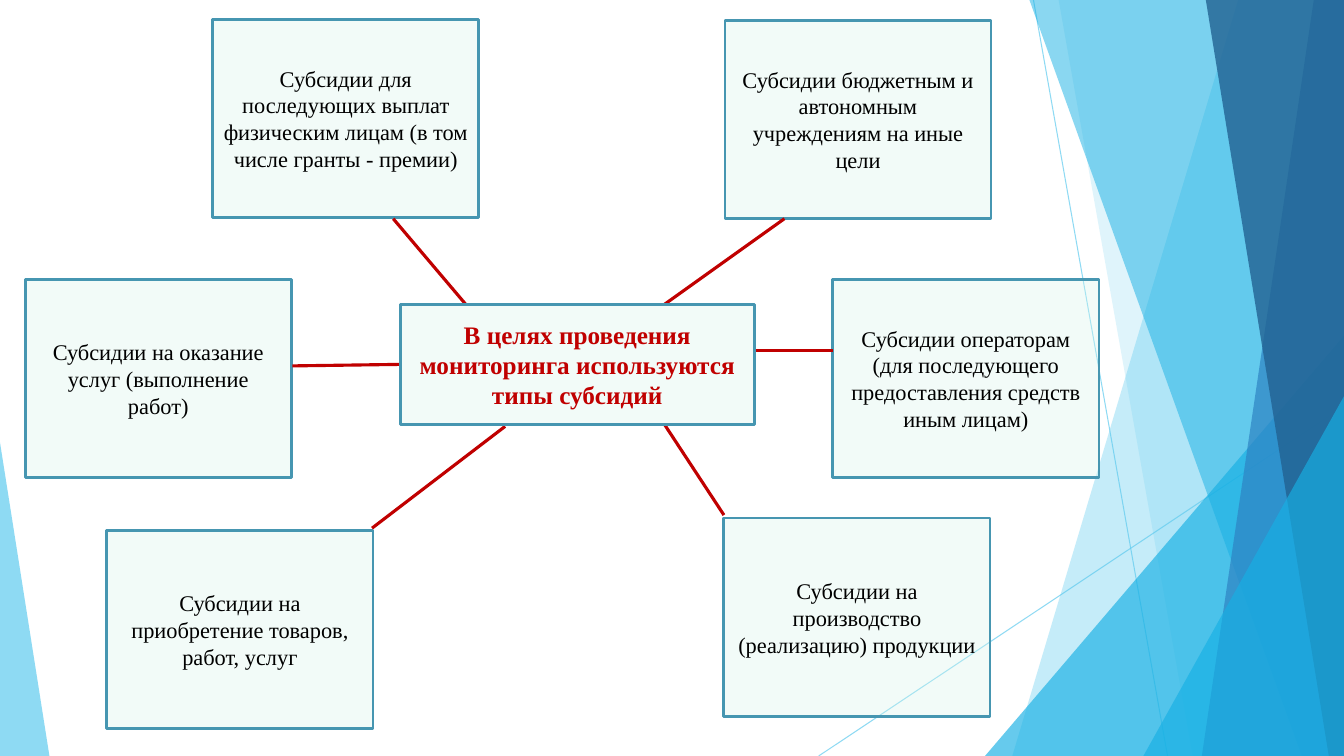
from lxml import etree
from pptx import Presentation
from pptx.dml.color import RGBColor
from pptx.enum.shapes import MSO_CONNECTOR, MSO_SHAPE
from pptx.enum.text import MSO_ANCHOR, PP_ALIGN
from pptx.oxml.ns import qn
from pptx.util import Pt

PX = 9144  # 100 px to the inch
SLIDE_W, SLIDE_H = 1333, 750
FONT = "Times New Roman"

STRAIGHT = MSO_CONNECTOR.STRAIGHT
RECTANGLE, TRIANGLE = MSO_SHAPE.RECTANGLE, MSO_SHAPE.ISOSCELES_TRIANGLE
MIDDLE, CENTER = MSO_ANCHOR.MIDDLE, PP_ALIGN.CENTER
LEFT_SIDE = 1

SKY = RGBColor(0x5F, 0xCB, 0xEF)
CYAN = RGBColor(0x17, 0xB0, 0xE4)
BLUE = RGBColor(0x2E, 0x83, 0xC3)
NAVY = RGBColor(0x22, 0x62, 0x92)
MINT = RGBColor(0xD9, 0xF6, 0xEC)
TEAL = RGBColor(0x46, 0x96, 0xB1)
RED = RGBColor(0xC0, 0x00, 0x00)
BLACK = RGBColor(0x00, 0x00, 0x00)

CARD_W, CARD_H = 264, 197
CARDS = [  # left, top, text
    (211, 19, "Субсидии для последующих выплат физическим лицам (в том числе гранты - премии)"),
    (106, 526, "Субсидии на приобретение товаров, работ, услуг"),
    (25, 277, "Субсидии на оказание услуг (выполнение работ)"),
    (718, 514, "Субсидии на производство (реализацию) продукции"),
    (719, 20, "Субсидии бюджетным и автономным учреждениям на иные цели"),
    (826, 277, "Субсидии операторам (для последующего предоставления средств иным лицам)"),
]
HUB = (397, 302, 351, 119)
HUB_TEXT = "В целях проведения мониторинга используются типы субсидий"
SPOKES = [  # start and end
    (462, 302, 390, 217),
    (659, 302, 778, 217),
    (748, 348, 826, 348),
    (718, 511, 659, 421),
    (369, 524, 501, 423),
]
LEFT_SPOKE = (290, 363, 397, 362)


def set_alpha(fill_format, percent):
    """Make a solid fill translucent."""
    color = fill_format._xPr.find(".//" + qn("a:srgbClr"))
    etree.SubElement(color, qn("a:alpha")).set("val", str(percent * 1000))


def paint(shape, color, alpha):
    shape.shadow.inherit = False
    shape.fill.solid()
    shape.fill.fore_color.rgb = color
    set_alpha(shape.fill, alpha)
    shape.line.fill.background()


def add_line(page, ends, color, width):
    line = page.shapes.add_connector(STRAIGHT, *(value * PX for value in ends))
    line.line.color.rgb = color
    line.line.width = Pt(width)
    etree.SubElement(line.element.spPr, qn("a:effectLst"))
    return line


def add_triangle(page, box, apex, color, alpha):
    triangle = page.shapes.add_shape(TRIANGLE, *(value * PX for value in box))
    triangle.adjustments[0] = apex
    paint(triangle, color, alpha)


def add_band(page, box, top_left, bottom_left, color, alpha):
    """Slanted band that reaches the right edge of the box."""
    left, top, width, height = box
    right, bottom = left + width, top + height
    builder = page.shapes.build_freeform(left + top_left, top, scale=PX)
    builder.add_line_segments(
        [(right, top), (right, bottom), (left + bottom_left, bottom)], close=True)
    paint(builder.convert_to_shape(), color, alpha)


def add_facets(page, box):
    """Translucent facets along the right and left edges."""
    left, top, width, height = box
    right, bottom = left + width, top + height
    for ends in [(left + 1025, top, left + 1158, bottom),
                 (right, top + 403, left + 812, bottom)]:
        line = add_line(page, ends, SKY, 0.75)
        set_alpha(line.line.fill, 70)

    add_band(page, box, 1228, 1004, SKY, 36)
    add_band(page, box, 1050, 1183, SKY, 20)
    add_triangle(page, (right - 356, bottom - 417, 356, 417), 1, CYAN, 66)
    add_band(page, box, 1021, 1291, CYAN, 50)
    add_band(page, box, 1303, 1192, BLUE, 70)
    add_band(page, box, 1196, 1318, NAVY, 80)
    add_triangle(page, (right - 199, bottom - 357, 199, 357), 1, CYAN, 66)
    add_triangle(page, (left, bottom - 311, 49, 311), 0, SKY, 70)


def add_card(page, box, text, size, color, bold=False):
    card = page.shapes.add_shape(RECTANGLE, *(value * PX for value in box))
    paint(card, MINT, 34)
    card.line.color.rgb = TEAL
    card.line.width = Pt(2)
    frame = card.text_frame
    frame.word_wrap = True
    frame.vertical_anchor = MIDDLE
    para = frame.paragraphs[0]
    para.text = text
    para.alignment = CENTER
    para.font.name = FONT
    para.font.size = Pt(size)
    para.font.bold = bold
    para.font.color.rgb = color
    return card


def add_subsidy_map(page, box):
    """Hub with six kinds of subsidy around it."""
    left, top = box[:2]

    def shift(x, y):
        return left + x, top + y

    for x, y, text in CARDS:
        add_card(page, (*shift(x, y), CARD_W, CARD_H), text, 16, BLACK)

    hub = add_card(page, (*shift(*HUB[:2]), *HUB[2:]), HUB_TEXT, 18, RED, bold=True)
    for spoke in SPOKES + [LEFT_SPOKE]:
        line = add_line(page, (*shift(*spoke[:2]), *shift(*spoke[2:])), RED, 2.25)
        if spoke == LEFT_SPOKE:
            line.end_connect(hub, LEFT_SIDE)

    # The hub lies above its spokes
    hub.element.getparent().append(hub.element)


def main():
    deck = Presentation()
    deck.slide_width, deck.slide_height = SLIDE_W * PX, SLIDE_H * PX
    page = deck.slides.add_slide(deck.slide_layouts[6])
    whole = (0, 0, SLIDE_W, SLIDE_H)
    add_facets(page, whole)
    add_subsidy_map(page, whole)
    deck.save("out.pptx")


if __name__ == "__main__":
    main()
